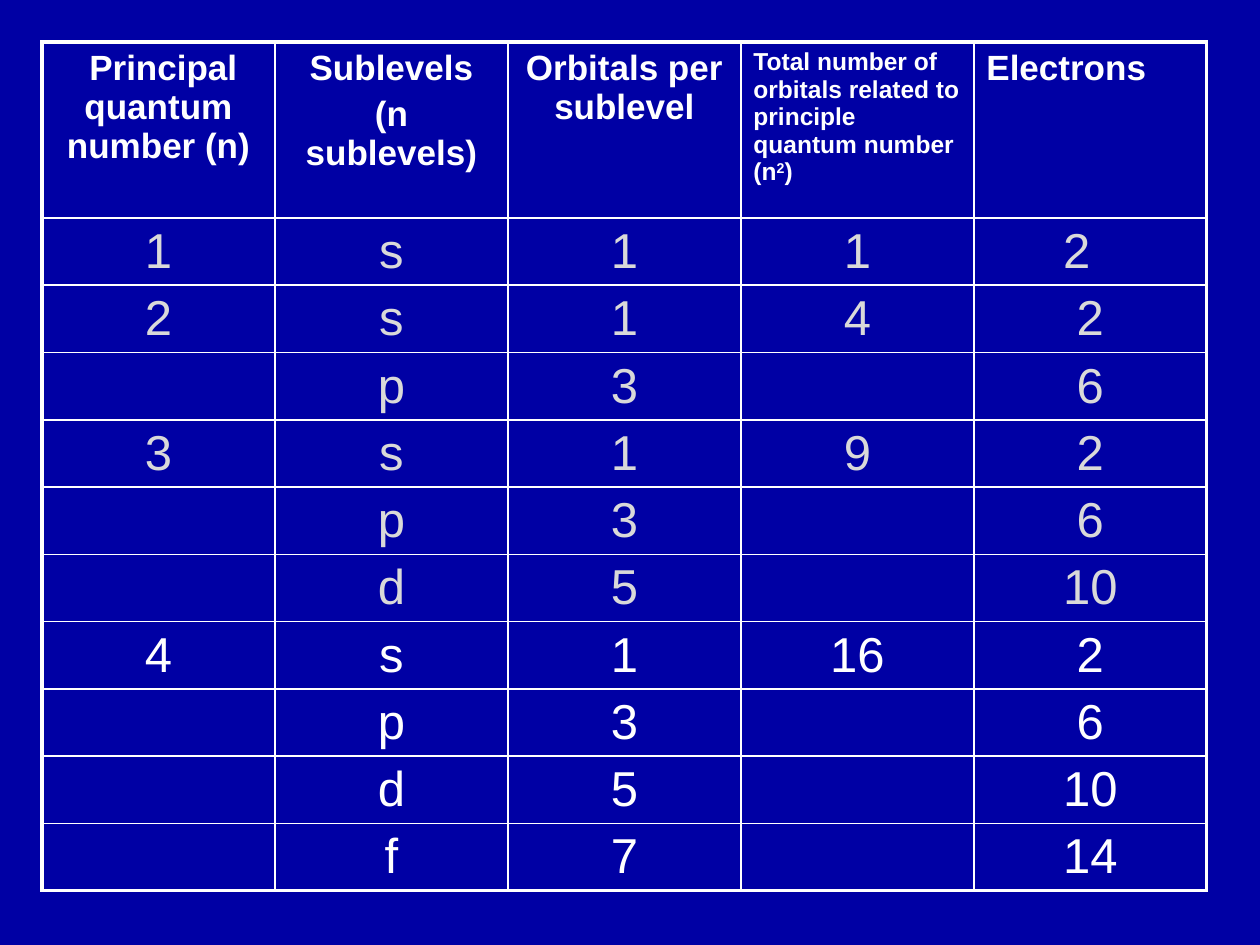
from dataclasses import dataclass

from lxml import etree
from pptx import Presentation
from pptx.dml.color import RGBColor
from pptx.enum.text import PP_ALIGN
from pptx.oxml.ns import qn
from pptx.util import Emu, Pt

CENTER, LEFT = PP_ALIGN.CENTER, PP_ALIGN.LEFT
PX = 914400 // 126
BLANK_LAYOUT = 6


@dataclass(frozen=True)
class Theme:
    font: str = "Arial"
    background: str = "0000A4"
    bright: str = "FFFFFF"
    muted: str = "D9D9D9"
    heading: int = 20
    small_heading: int = 14
    body: int = 28
    paragraph_gap: int = 4
    outer_line: float = 2.25
    inner_line: float = 1


HEADINGS = [
    (" Principal quantum number (n)", CENTER, Theme.heading),
    ("Sublevels\n(n sublevels)", CENTER, Theme.heading),
    ("Orbitals per sublevel", CENTER, Theme.heading),
    ("Total number of orbitals related to principle quantum number (n", LEFT, Theme.small_heading),
    ("Electrons", LEFT, Theme.heading),
]
SUBLEVELS = [("s", 1, 2), ("p", 3, 6), ("d", 5, 10), ("f", 7, 14)]
LEVELS = range(1, 5)


class SlideBuilder:
    """Draws styled elements on the current slide."""

    def __init__(self, presentation, theme):
        self.theme = theme
        self.slide = presentation.slides.add_slide(presentation.slide_layouts[BLANK_LAYOUT])
        fill = self.slide.background.fill
        fill.solid()
        fill.fore_color.rgb = RGBColor.from_string(theme.background)

    def table(self, left, top, column_width, columns, row_heights):
        frame = self.slide.shapes.add_table(
            len(row_heights), columns, left * PX, top * PX,
            column_width * columns * PX, sum(row_heights) * PX)
        table = frame.table
        table.first_row = table.horz_banding = False
        for column in table.columns:
            column.width = Emu(column_width * PX)
        for row, height in zip(table.rows, row_heights):
            row.height = Emu(height * PX)
        last_row, last_column = len(row_heights) - 1, columns - 1
        for r in range(len(row_heights)):
            for c in range(columns):
                cell = table.cell(r, c)
                cell.fill.background()
                self.borders(cell, {"lnL": c == 0, "lnR": c == last_column,
                                    "lnT": r == 0, "lnB": r == last_row})
        return table

    def borders(self, cell, outer_sides):
        properties = cell._tc.get_or_add_tcPr()
        for index, (side, outer) in enumerate(outer_sides.items()):
            width = self.theme.outer_line if outer else self.theme.inner_line
            line = etree.Element(qn(f"a:{side}"), w=str(int(Pt(width))))
            fill = etree.SubElement(line, qn("a:solidFill"))
            etree.SubElement(fill, qn("a:srgbClr"), val=self.theme.bright)
            properties.insert(index, line)

    def cell_text(self, cell, text, size, color, align=CENTER, bold=False):
        cell.text_frame.text = text
        for index, paragraph in enumerate(cell.text_frame.paragraphs):
            paragraph.alignment = align
            if index:
                paragraph.space_before = Pt(self.theme.paragraph_gap)
            for run in paragraph.runs:
                self.style(run, size, color, bold)

    def superscript(self, cell, raised, following, size, color, bold):
        paragraph = cell.text_frame.paragraphs[0]
        for text, baseline in ((raised, "30000"), (following, "0")):
            run = paragraph.add_run()
            run.text = text
            self.style(run, size, color, bold)
            run._r.get_or_add_rPr().set("baseline", baseline)

    def style(self, run, size, color, bold):
        run.font.name = self.theme.font
        run.font.size = Pt(size)
        run.font.bold = bold
        run.font.color.rgb = RGBColor.from_string(color)


def main():
    theme = Theme()
    presentation = Presentation()
    presentation.slide_width = Emu(1260 * PX)
    presentation.slide_height = Emu(945 * PX)
    builder = SlideBuilder(presentation, theme)

    levels = [(n, sublevel) for n in LEVELS for sublevel in SUBLEVELS[:n]]
    orbitals = builder.table(42, 42, 233, len(HEADINGS), [176] + [67] * len(levels))

    for column, (heading, align, size) in enumerate(HEADINGS):
        builder.cell_text(orbitals.cell(0, column), heading, size, theme.bright, align, True)
    builder.superscript(orbitals.cell(0, 3), "2", ")", theme.small_heading, theme.bright, True)

    for row, (n, (sublevel, orbital_count, electrons)) in enumerate(levels, start=1):
        opens_level = sublevel == "s"
        color = theme.bright if n == LEVELS[-1] else theme.muted
        values = (n if opens_level else "", sublevel, orbital_count,
                  n ** 2 if opens_level else "", electrons)
        for column, value in enumerate(values):
            builder.cell_text(orbitals.cell(row, column), str(value), theme.body, color)

    first_electrons = orbitals.cell(1, 4)
    first_electrons.margin_right = Emu(40 * PX)

    presentation.save("out.pptx")


if __name__ == "__main__":
    main()
